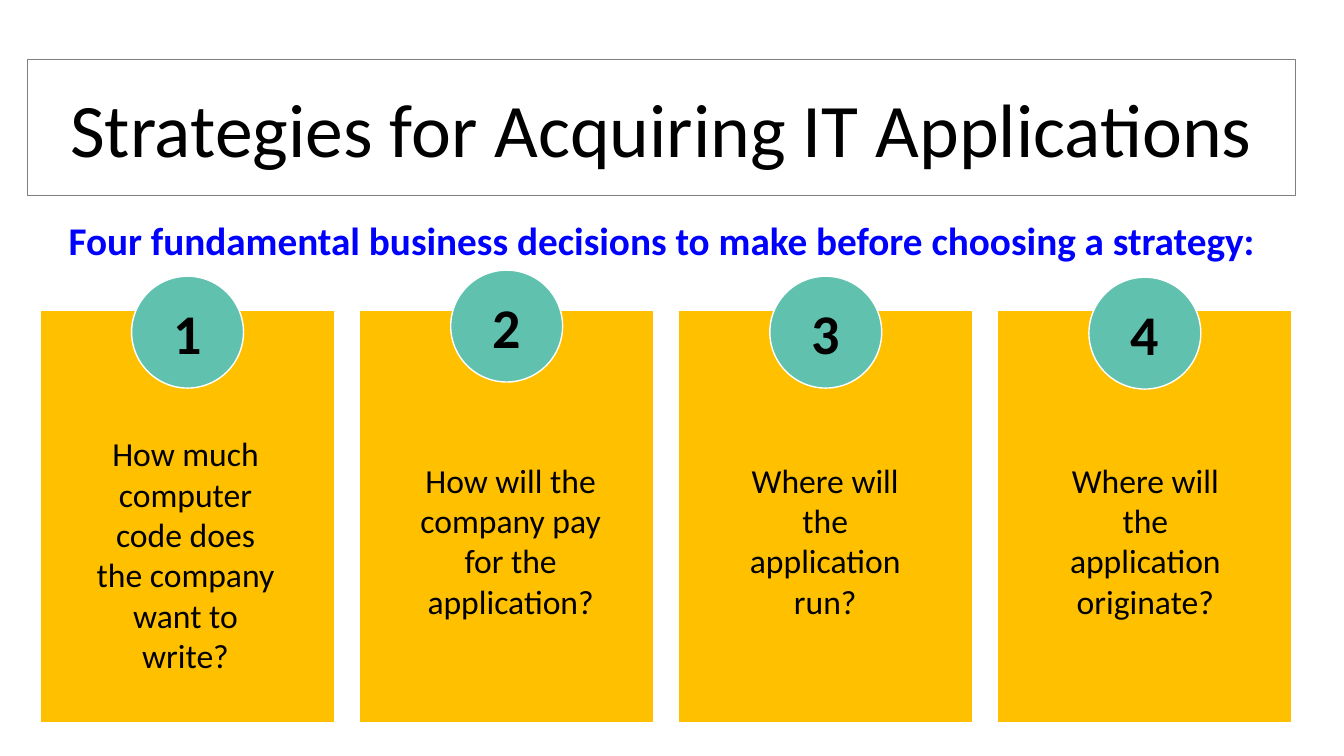
import pptx
import pptx.util
import pptx.dml.color
import pptx.enum.shapes
import pptx.enum.text
import pptx.oxml
import pptx.oxml.ns
from dataclasses import dataclass

Inches = pptx.util.Inches
SHAPE = pptx.enum.shapes.MSO_SHAPE
ANCHOR = pptx.enum.text.MSO_ANCHOR


@dataclass(frozen=True)
class Theme:
    """Hold the colours, font and type sizes of the slide."""
    font: str = "Calibri"
    black: str = "000000"
    white: str = "FFFFFF"
    grey: str = "808080"
    blue: str = "0000FF"
    gold: str = "FFC000"
    teal: str = "60C1AE"
    title: int = 54
    lead: int = 28
    badge: int = 40
    body: int = 24


THEME = Theme()
LEFT, STEP = 0.4, 3.165
WIDTH, BADGE = 2.92, 1.11
CARDS = [
    ("How much computer code does the company want to write?", 2.74, (0.85, 4.25, 1.98, 2.52)),
    ("How will the company pay for the application?", 2.68, (4.03, 4.51, 2.07, 1.72)),
    ("Where will the application run?", 2.74, (7.17, 4.51, 2.03, 1.72)),
    ("Where will the application originate?", 2.75, (10.36, 4.51, 2, 1.72)),
]


def rgb(code):
    """Turn a hex code into a colour."""
    return pptx.dml.color.RGBColor.from_string(code)


def write(shape, text, size, color=THEME.black, bold=False, anchor=ANCHOR.MIDDLE):
    """Put centred, formatted text in a shape."""
    frame = shape.text_frame
    frame.word_wrap = True
    frame.auto_size = pptx.enum.text.MSO_AUTO_SIZE.NONE
    frame.vertical_anchor = anchor
    para = frame.paragraphs[0]
    para.alignment = pptx.enum.text.PP_ALIGN.CENTER
    run = para.add_run()
    run.text = text
    font = run.font
    font.name, font.size, font.bold = THEME.font, pptx.util.Pt(size), bold
    font.color.rgb = rgb(color)


def paint(shape, fill, line):
    """Give a shape a plain fill and a thin outline."""
    shape.fill.solid()
    shape.fill.fore_color.rgb = rgb(fill)
    shape.line.color.rgb = rgb(line)
    shape.line.width = pptx.util.Pt(1)


def add_form(slide, kind, box, fill):
    """Add a filled preset shape with a white edge."""
    shape = slide.shapes.add_shape(kind, *map(Inches, box))
    shape.shadow.inherit = False
    paint(shape, fill, THEME.white)
    return shape


def add_text(slide, box, text, size, **style):
    """Add a text box that starts at its top."""
    area = slide.shapes.add_textbox(*map(Inches, box))
    write(area, text, size, anchor=ANCHOR.TOP, **style)


def set_title(slide, box, text):
    """Place the title in a rounded frame."""
    title = slide.shapes.title
    title.left, title.top, title.width, title.height = map(Inches, box)
    space = pptx.oxml.ns.nsdecls("a")
    outline = pptx.oxml.parse_xml(f'<a:prstGeom {space} prst="roundRect"><a:avLst/></a:prstGeom>')
    title.element.spPr.append(outline)
    paint(title, THEME.white, THEME.grey)
    write(title, text, THEME.title)


def add_card(slide, index, text, top, box):
    """Add one numbered question card."""
    left = LEFT + index * STEP
    add_form(slide, SHAPE.FLOWCHART_PROCESS, (left, 3.08, WIDTH, 4.09), THEME.gold)
    spot = (left + (WIDTH - BADGE) / 2, top, BADGE, BADGE)
    badge = add_form(slide, SHAPE.OVAL, spot, THEME.teal)
    write(badge, str(index + 1), THEME.badge, bold=True)
    add_text(slide, box, text, THEME.body)


def main():
    """Build the slide and save it."""
    deck = pptx.Presentation()
    deck.slide_width, deck.slide_height = Inches(13.33), Inches(7.5)
    slide = deck.slides.add_slide(deck.slide_layouts[5])
    set_title(slide, (0.27, 0.59, 12.58, 1.35), "Strategies for Acquiring IT Applications")
    lead = "Four fundamental business decisions to make before choosing a strategy:"
    add_text(slide, (0.27, 2.1, 12.58, 0.57), lead, THEME.lead, color=THEME.blue, bold=True)
    for index, card in enumerate(CARDS):
        add_card(slide, index, *card)
    deck.save("out.pptx")


if __name__ == "__main__":
    main()
